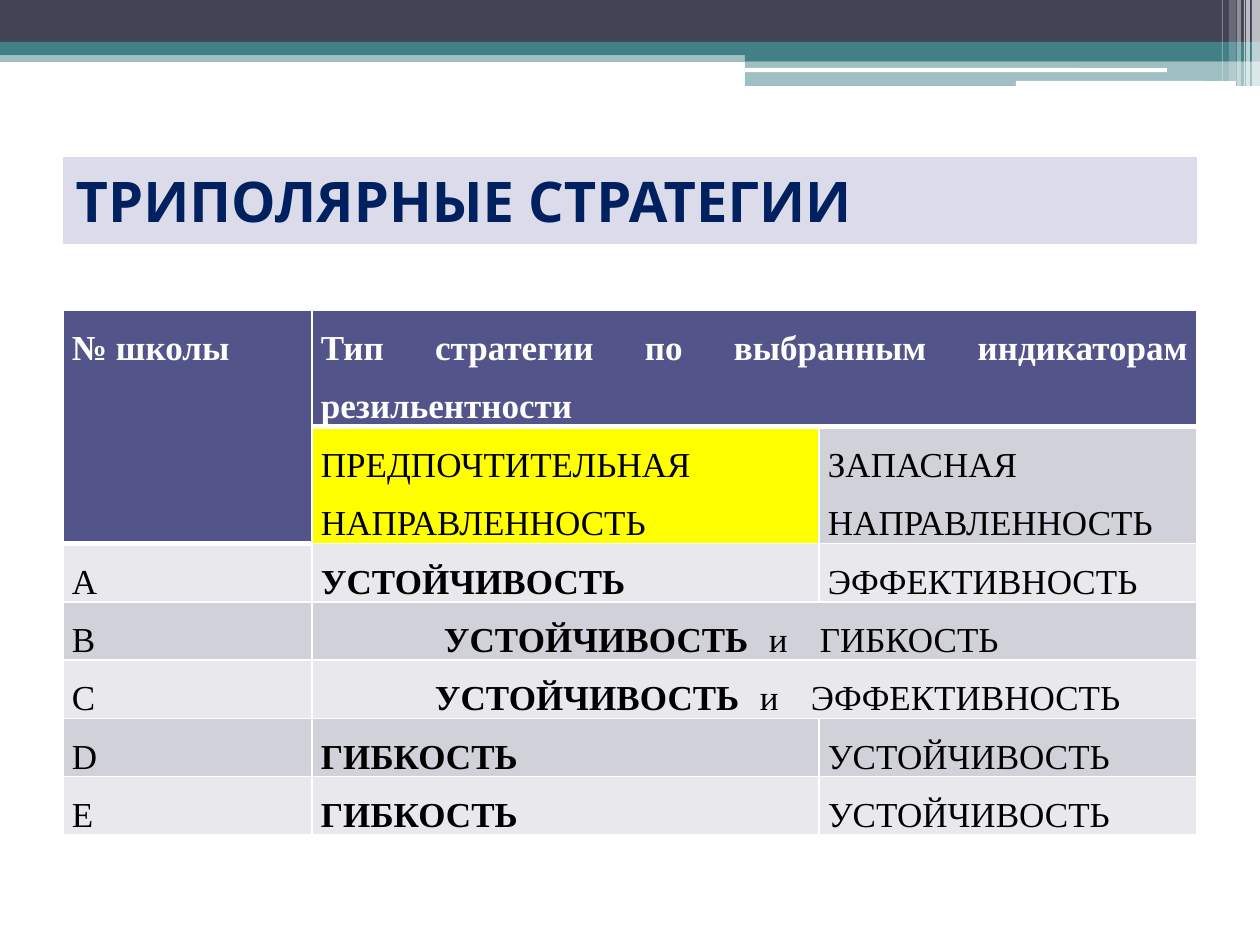
from lxml import etree
from pptx import Presentation
from pptx import util as u
from pptx.dml.color import RGBColor
from pptx.enum import shapes, text
from pptx.oxml.ns import qn

PX = 914400 // 126
WHITE, TEAL, SLATE, INDIGO = "FFFFFF", "438086", "424456", "53548A"
YELLOW, GREY, PALE = "FFFF00", "D1D1DA", "E9E9ED"

TITLE = "ТРИПОЛЯРНЫЕ СТРАТЕГИИ"
TITLE_BOX = (63, 157, 1134, 87)

# left, top, width, height, colour, opacity in %
BANDS = [
    (0, 50, 1260, 12, TEAL, 50),
    (0, 0, 1260, 42, SLATE, 100),
    (0, 42, 1260, 13, TEAL, 100),
    (745, 49, 515, 12, TEAL, 100),
    (745, 61, 515, 25, TEAL, 50),
]
ROUNDED_LINES = [
    (745, 68, 422, 4, WHITE, 100),
    (1016, 81, 220, 5, WHITE, 100),
]
STRIPES = [
    (1252, 0, 8, 86, WHITE, 65),
    (1246, 0, 4, 86, WHITE, 65),
    (1244, 0, 1, 86, WHITE, 60),
    (1237, 0, 4, 86, WHITE, 40),
    (1229, 0, 7, 81, WHITE, 20),
    (1222, 0, 1, 81, WHITE, 30),
]

HEADER = ["№ школы", "Тип стратегии по выбранным индикаторам резильентности"]
SUBHEADER = ["ПРЕДПОЧТИТЕЛЬНАЯ НАПРАВЛЕННОСТЬ", "ЗАПАСНАЯ НАПРАВЛЕННОСТЬ"]
# school, leading strategy, second strategy, indent of a joint strategy (None: two cells)
SCHOOLS = [
    ("A", "УСТОЙЧИВОСТЬ", "ЭФФЕКТИВНОСТЬ", None),
    ("B", "УСТОЙЧИВОСТЬ", "ГИБКОСТЬ", 123),
    ("C", "УСТОЙЧИВОСТЬ", "ЭФФЕКТИВНОСТЬ", 114),
    ("D", "ГИБКОСТЬ", "УСТОЙЧИВОСТЬ", None),
    ("E", "ГИБКОСТЬ", "УСТОЙЧИВОСТЬ", None),
]
TABLE_LEFT, TABLE_TOP = 63, 310
COLUMNS = [249, 507, 378]
ROWS = [116, 117] + [58] * len(SCHOOLS)
AND_SPACING = 667  # letter spacing of the joining word, 1/100 pt


def rgb(colour):
    return RGBColor.from_string(colour)


def paint(target, colour):
    target.fill.solid()
    target.fill.fore_color.rgb = rgb(colour)


def add_bars(slide, kind, bars):
    for *box, colour, opacity in bars:
        bar = slide.shapes.add_shape(kind, *(v * PX for v in box))
        bar.shadow.inherit = False
        bar.line.fill.background()
        paint(bar, colour)
        if opacity < 100:
            fill = bar.fill._xPr.find(qn("a:solidFill"))[0]
            etree.SubElement(fill, qn("a:alpha"), val=str(opacity * 1000))


def set_borders(cell, top, bottom):
    """White borders; top and bottom are widths in points."""
    properties = cell._tc.get_or_add_tcPr()
    for place, (side, width) in enumerate(
            [("L", 1), ("R", 1), ("T", top), ("B", bottom)]):
        line = etree.Element(qn(f"a:ln{side}"), w=str(u.Pt(width)))
        fill = etree.SubElement(line, qn("a:solidFill"))
        etree.SubElement(fill, qn("a:srgbClr"), val=WHITE)
        properties.insert(place, line)


def write(cell, parts, fill, colour="000000"):
    """Fill a cell with (text, bold) parts."""
    paint(cell, fill)
    cell.margin_left = cell.margin_right = 9 * PX
    cell.margin_top = cell.margin_bottom = 0
    paragraph = cell.text_frame.paragraphs[0]
    paragraph.alignment = text.PP_ALIGN.JUSTIFY
    paragraph.line_spacing = 1.5
    paragraph.space_after = u.Pt(10)
    for words, bold in parts:
        run = paragraph.add_run()
        run.text = words
        run.font.name, run.font.size = "Times New Roman", u.Pt(20)
        run.font.bold = bold
        run.font.color.rgb = rgb(colour)
    return paragraph


def add_title(slide):
    title = slide.shapes.title
    title.left, title.top, title.width, title.height = (v * PX for v in TITLE_BOX)
    paint(title, "DBDBE9")
    frame = title.text_frame
    frame.text = TITLE
    frame.auto_size = text.MSO_AUTO_SIZE.NONE
    frame.vertical_anchor = text.MSO_ANCHOR.MIDDLE
    paragraph = frame.paragraphs[0]
    paragraph.alignment = text.PP_ALIGN.LEFT
    font = paragraph.runs[0].font
    font.name, font.size, font.bold = "Karla", u.Pt(32), True
    font.color.rgb = rgb("002060")


def add_strategies(slide):
    table = slide.shapes.add_table(
        len(ROWS), len(COLUMNS), TABLE_LEFT * PX, TABLE_TOP * PX,
        sum(COLUMNS) * PX, sum(ROWS) * PX).table
    for column, width in zip(table.columns, COLUMNS):
        column.width = width * PX
    for row, height in zip(table.rows, ROWS):
        row.height = height * PX

    for r in range(len(ROWS)):
        for c in range(len(COLUMNS)):
            header_end = 1 if c == 0 else 0
            set_borders(table.cell(r, c),
                        top=3 if r == header_end + 1 else 1,
                        bottom=3 if r == header_end or r == c == 0 else 1)

    table.cell(0, 0).merge(table.cell(1, 0))
    table.cell(0, 1).merge(table.cell(0, 2))
    for c, words in enumerate(HEADER):
        write(table.cell(0, c), [(words, True)], INDIGO, WHITE)
    for c, (words, fill) in enumerate(zip(SUBHEADER, [YELLOW, GREY]), 1):
        write(table.cell(1, c), [(words, False)], fill)

    for r, (school, leading, second, indent) in enumerate(SCHOOLS, 2):
        fill = GREY if r % 2 else PALE
        write(table.cell(r, 0), [(school, False)], fill)
        if indent is None:
            write(table.cell(r, 1), [(leading, True)], fill)
            write(table.cell(r, 2), [(second, False)], fill)
        else:
            table.cell(r, 1).merge(table.cell(r, 2))
            joint = write(table.cell(r, 1),
                          [(leading, True), (" и ", False), (second, False)], fill)
            joint._p.get_or_add_pPr().set("marL", str(indent * PX))
            joint.runs[1].font._element.set("spc", str(AND_SPACING))


def main():
    deck = Presentation()
    deck.slide_width, deck.slide_height = u.Inches(10), u.Inches(7.5)
    slide = deck.slides.add_slide(deck.slide_layouts[5])
    add_bars(slide, shapes.MSO_SHAPE.RECTANGLE, BANDS)
    add_bars(slide, shapes.MSO_SHAPE.ROUNDED_RECTANGLE, ROUNDED_LINES)
    add_bars(slide, shapes.MSO_SHAPE.RECTANGLE, STRIPES)
    add_title(slide)
    add_strategies(slide)
    deck.save("out.pptx")


if __name__ == "__main__":
    main()
